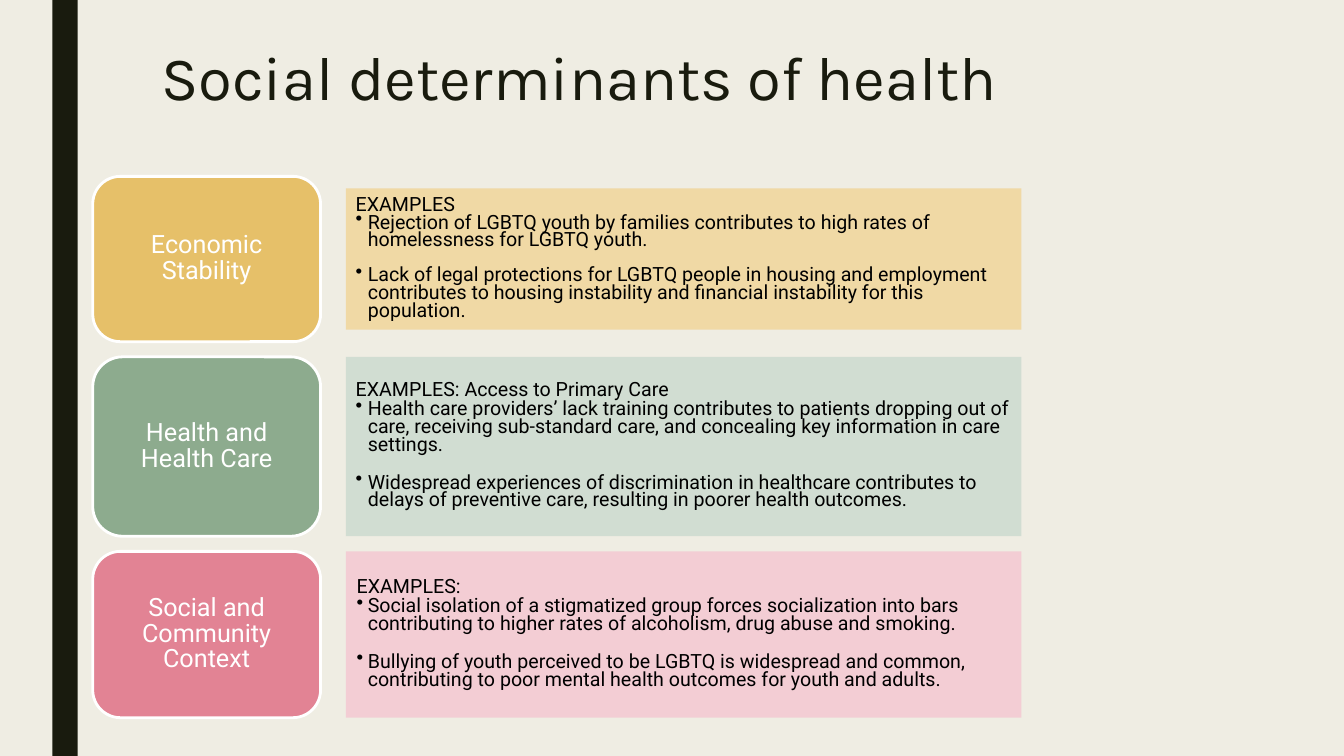
from pptx import Presentation
from pptx.dml.color import RGBColor
from pptx.enum.shapes import MSO_SHAPE
from pptx.enum.text import MSO_ANCHOR, MSO_AUTO_SIZE, PP_ALIGN
from pptx.oxml.xmlchemy import OxmlElement
from pptx.util import Inches, Pt

COLORS = {
    "paper": "EFEDE3", "ink": "191B0E", "white": "FFFFFF", "black": "000000",
    "gold": "E6C069", "sand": "F0D9A5",
    "green": "8DAB8E", "mint": "D1DDD2",
    "rose": "E28394", "blush": "F3CDD4",
}

# label, label colour, panel colour, label span, panel span, space before,
# heading indent, heading, bullets
ROWS = [
    ("Economic Stability", "gold", "sand", (1.75, 1.64), (1.87, 1.4), 0, 0,
     "EXAMPLES",
     ["Rejection of LGBTQ youth by families contributes to high rates of "
      "homelessness for LGBTQ youth.",
      "Lack of legal protections for LGBTQ people in housing and employment "
      "contributes to housing instability and financial instability for this "
      "population."]),
    ("Health and Health Care", "green", "mint", (3.54, 1.78), (3.54, 1.78), 1, 0,
     "EXAMPLES: Access to Primary Care",
     ["Health care providers’ lack training contributes to patients dropping "
      "out of care, receiving sub-standard care, and concealing key "
      "information in care settings.",
      "Widespread experiences of discrimination in healthcare contributes to "
      "delays of preventive care, resulting in poorer health outcomes."]),
    ("Social and Community Context", "rose", "blush", (5.47, 1.65), (5.47, 1.65), 1, 0.01,
     "EXAMPLES:",
     ["Social isolation of a stigmatized group forces socialization into bars "
      "contributing to higher rates of alcoholism, drug abuse and smoking.",
      "Bullying of youth perceived to be LGBTQ is widespread and common, "
      "contributing to poor mental health outcomes for youth and adults."]),
]
GAP = 12.5  # points of extra space between two bullets


def apply(obj, values):
    for name, value in values.items():
        setattr(obj, name, value)


def color(name):
    return RGBColor.from_string(COLORS[name])


class Deck:
    def __init__(self):
        self.file = Presentation()
        apply(self.file, {"slide_width": Inches(13.33), "slide_height": Inches(7.5)})
        self.slide = self.file.slides.add_slide(self.file.slide_layouts[5])
        fill = self.slide.background.fill
        fill.solid()
        fill.fore_color.rgb = color("paper")

    def words(self, para, text, font, size, ink, **form):
        run = para.add_run()
        run.text = text
        apply(run.font, {"name": font, "size": Pt(size)})
        run.font.color.rgb = color(ink)
        apply(para, form)

    def title(self, text):
        shape = self.slide.shapes.title
        apply(shape, {"left": Inches(1.5), "top": Inches(0.42),
                      "width": Inches(10.5), "height": Inches(1.62)})
        frame = shape.text_frame
        apply(frame, {"vertical_anchor": MSO_ANCHOR.TOP, "word_wrap": True,
                      "auto_size": MSO_AUTO_SIZE.NONE})
        self.words(frame.paragraphs[0], text, "Karla", 44, "ink",
                   alignment=PP_ALIGN.LEFT, line_spacing=0.89)

    def box(self, kind, left, top, width, height, fill):
        shape = self.slide.shapes.add_shape(
            kind, *map(Inches, (left, top, width, height)))
        shape.shadow.inherit = False
        shape.fill.solid()
        shape.fill.fore_color.rgb = color(fill)
        shape.line.fill.background()
        apply(shape.text_frame, {"word_wrap": True,
                                 "vertical_anchor": MSO_ANCHOR.MIDDLE})
        return shape

    def label(self, text, top, height, fill):
        shape = self.box(MSO_SHAPE.ROUNDED_RECTANGLE, 0.92, top, 2.26, height, fill)
        shape.line.color.rgb = color("white")
        shape.line.width = Pt(2)
        self.words(shape.text_frame.paragraphs[0], text, "Roboto", 18, "white",
                   alignment=PP_ALIGN.CENTER, line_spacing=0.85)

    def panel(self, head, points, top, height, fill, lead, shift):
        frame = self.box(MSO_SHAPE.RECTANGLE, 3.43, top, 6.7, height, fill).text_frame
        for i, text in enumerate([head, *points]):
            para = frame.paragraphs[0] if i == 0 else frame.add_paragraph()
            self.words(para, text, "Roboto", 14, "black",
                       alignment=PP_ALIGN.LEFT, line_spacing=0.75,
                       space_before=Pt(lead + (GAP + lead if i > 1 else 0)))
            if i:
                self.bullet(para, 0.12, shift - 0.12)
            else:
                para._p.get_or_add_pPr().set("marL", str(Inches(shift)))

    def bullet(self, para, left, hang):
        props = para._p.get_or_add_pPr()
        props.set("marL", str(Inches(left)))
        props.set("indent", str(Inches(hang)))
        mark = OxmlElement("a:buChar")
        mark.set("char", "•")
        props.append(mark)


def main():
    deck = Deck()
    deck.box(MSO_SHAPE.RECTANGLE, 0.52, 0, 0.25, 7.5, "ink")
    deck.title("Social determinants of health")
    for name, dark, light, side, main_span, lead, shift, head, points in ROWS:
        deck.label(name, *side, dark)
        deck.panel(head, points, *main_span, light, lead, shift)
    deck.file.save("out.pptx")


if __name__ == "__main__":
    main()
